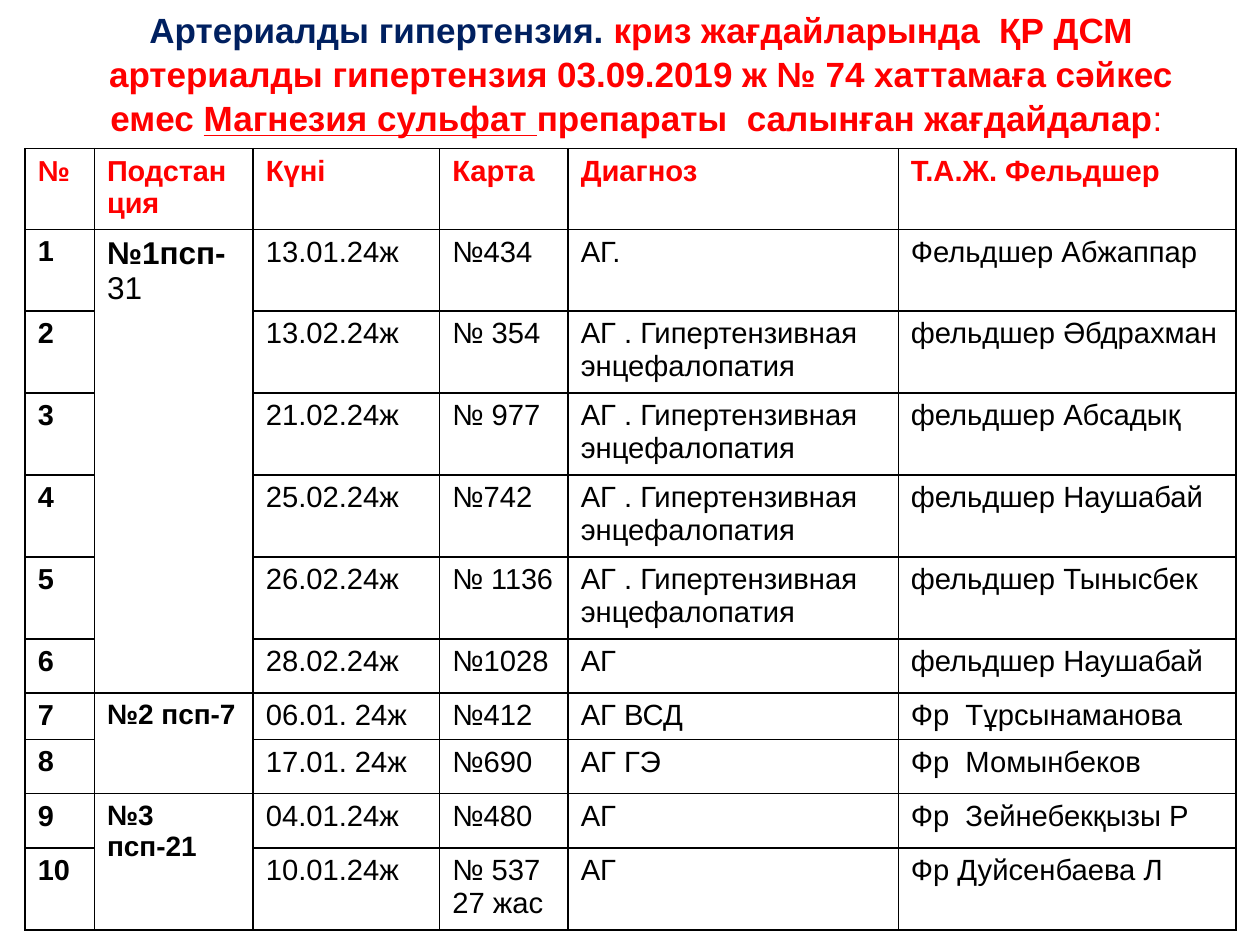
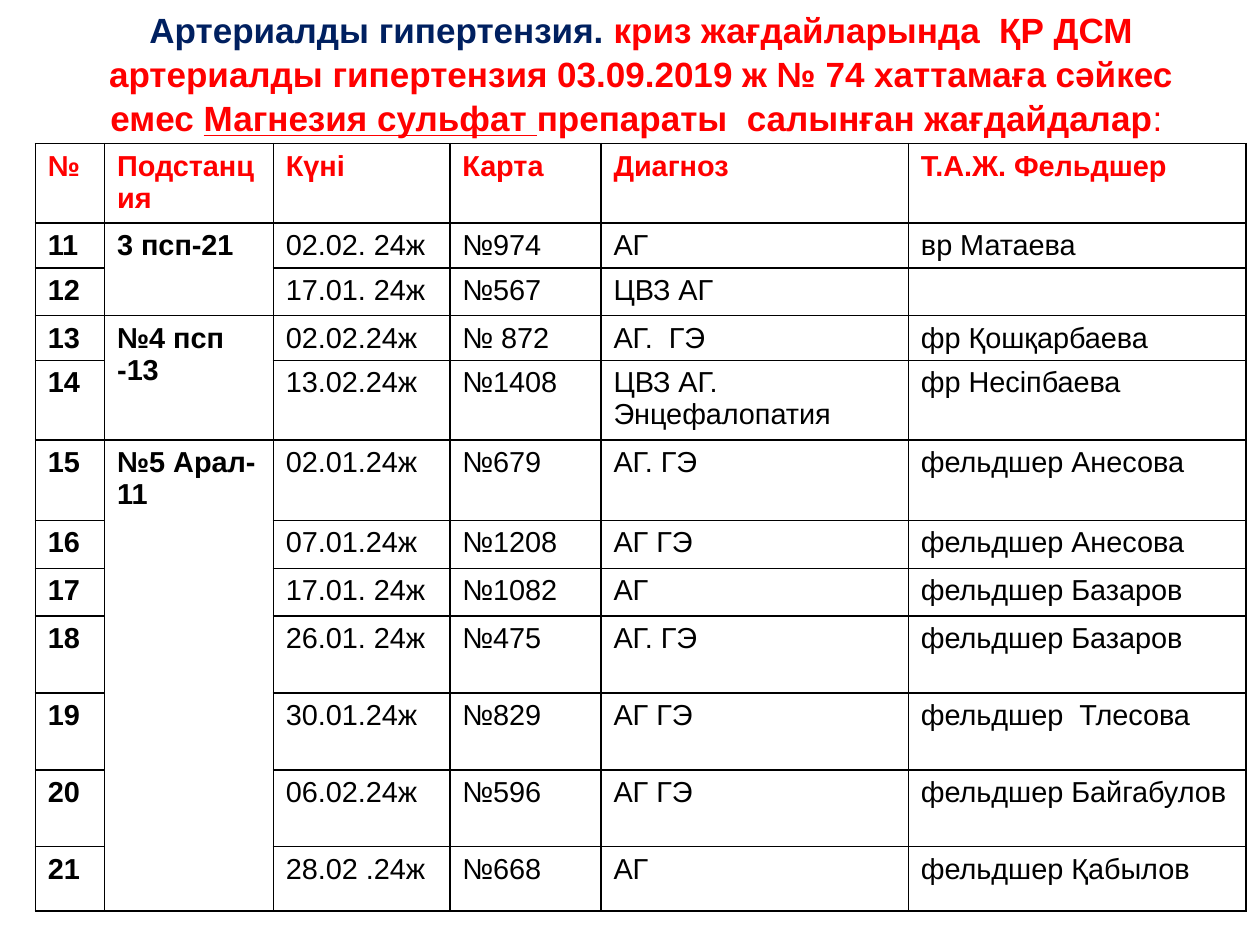
from pptx import Presentation
from pptx.util import Inches, Pt
from pptx.dml.color import RGBColor
from pptx.enum.text import PP_ALIGN, MSO_ANCHOR
from pptx.oxml.ns import qn
from lxml.etree import SubElement

FONT = "Arial"
NAVY = RGBColor(0x00, 0x20, 0x60)
RED = RGBColor(0xFF, 0x00, 0x00)
BLACK = RGBColor(0x00, 0x00, 0x00)

TITLE = [
    ("Артериалды гипертензия.", {"color": NAVY}),
    (" криз жағдайларында  ҚР ДСМ артериалды гипертензия 03.09.2019 ж "
     "№ 74 хаттамаға сәйкес емес ", {}),
    ("Магнезия сульфат ", {"underline": True}),
    ("препараты  салынған жағдайдалар", {}),
    (": ", {"bold": False}),
]
HEAD = ["№", "Подстанция", "Күні", "Карта", "Диагноз", "Т.А.Ж. Фельдшер"]
BRAIN = "АГ . Гипертензивная энцефалопатия"

# Station (None continues the one above), date, card, diagnosis, medic
# A bar in a station name ends its bold part
CASES_A = [
    ("№1псп-| 31", "13.01.24ж", "№434", "АГ.", "Фельдшер Абжаппар"),
    (None, "13.02.24ж", "№ 354", BRAIN, "фельдшер Әбдрахман"),
    (None, "21.02.24ж", "№ 977", BRAIN, "фельдшер Абсадық"),
    (None, "25.02.24ж", "№742", BRAIN, "фельдшер Наушабай"),
    (None, "26.02.24ж", "№ 1136", BRAIN, "фельдшер Тынысбек"),
    (None, "28.02.24ж", "№1028", "АГ", "фельдшер Наушабай"),
    ("№2 псп-7", "06.01. 24ж", "№412", "АГ ВСД", "Фр  Тұрсынаманова"),
    (None, "17.01. 24ж", "№690", "АГ ГЭ", "Фр  Момынбеков"),
    ("№3 псп-21", "04.01.24ж", "№480", "АГ", "Фр  Зейнебекқызы Р"),
    (None, "10.01.24ж", "№ 537 27 жас", "АГ", "Фр Дуйсенбаева Л"),
]
CASES_B = [
    ("3 псп-21", "02.02. 24ж", "№974", "АГ", "вр Матаева"),
    (None, "17.01. 24ж", "№567", "ЦВЗ АГ", ""),
    ("№4 псп -13", "02.02.24ж", "№ 872", "АГ.  ГЭ", "фр Қошқарбаева"),
    (None, "13.02.24ж", "№1408", "ЦВЗ АГ. Энцефалопатия", "фр Несіпбаева"),
    ("№5 Арал- 11", "02.01.24ж", "№679", "АГ. ГЭ", "фельдшер Анесова"),
    (None, "07.01.24ж", "№1208", "АГ ГЭ", "фельдшер Анесова"),
    (None, "17.01. 24ж", "№1082", "АГ", "фельдшер Базаров"),
    (None, "26.01. 24ж", "№475", "АГ. ГЭ", "фельдшер Базаров"),
    (None, "30.01.24ж", "№829", "АГ ГЭ", "фельдшер  Тлесова"),
    (None, "06.02.24ж", "№596", "АГ ГЭ", "фельдшер Байгабулов"),
    (None, "28.02 .24ж", "№668", "АГ", "фельдшер Қабылов"),
]

# Sizes: number, station, other columns
PAGES = [
    {"box": (0.2, 1.18, 9.61, 6.25), "first": 1, "cases": CASES_A,
     "cols": [0.55, 1.26, 1.48, 1.02, 2.62, 2.68],
     "rows": [0.64] + [0.65] * 5 + [0.43, 0.37, 0.43, 0.43, 0.65],
     "sizes": [16.5, 16] + [16.7] * 4,
     "special": {"№1псп-| 31": 18, "№ 1136": 16.5, "Подстанция": 16.5}},
    {"box": (0.28, 1.14, 9.61, 6.3), "first": 11, "cases": CASES_B,
     "cols": [0.55, 1.34, 1.4, 1.2, 2.44, 2.68],
     "rows": [0.61, 0.35, 0.38, 0.35, 0.6, 0.64, 0.38, 0.38]
             + [0.61] * 3 + [0.51],
     "sizes": [16.5] * 6, "special": {}},
]


def add_run(par, text, color, **form):
    run = par.add_run()
    run.text = text
    run.font.color.rgb = color
    for key, val in {"name": FONT, **form}.items():
        setattr(run.font, key, val)


def add_title(slide, box):
    frame = slide.shapes.add_textbox(*map(Inches, box)).text_frame
    frame.word_wrap = True
    frame.vertical_anchor = MSO_ANCHOR.MIDDLE
    par = frame.paragraphs[0]
    par.alignment = PP_ALIGN.CENTER
    par.line_spacing = 1.05
    for text, form in TITLE:
        add_run(par, text, **{"color": RED, "size": Pt(20), "bold": True, **form})


def add_edges(cell):
    props = cell._tc.get_or_add_tcPr()
    for i, side in enumerate(("lnL", "lnR", "lnT", "lnB")):
        line = props.makeelement(qn("a:" + side), {"w": str(Pt(1))})
        fill = SubElement(line, qn("a:solidFill"))
        SubElement(fill, qn("a:srgbClr"), val=str(BLACK))
        props.insert(i, line)


def fill_cell(cell, text, size, color, bold):
    form = {"margin_left": 0.1, "margin_right": 0.1,
            "margin_top": 0.05, "margin_bottom": 0.03}
    for key, val in form.items():
        setattr(cell, key, Inches(val))
    cell.fill.background()
    add_edges(cell)
    par = cell.text_frame.paragraphs[0]
    for i, part in enumerate(text.split("|") if text else []):
        add_run(par, part, color, size=Pt(size), bold=bold and i == 0)


def add_cases(slide, page):
    cases = page["cases"]
    rows = [HEAD] + [(str(n), *case) for n, case in enumerate(cases, page["first"])]
    table = slide.shapes.add_table(
        len(rows), len(HEAD), *map(Inches, page["box"])).table
    table.first_row = table.horz_banding = False
    for col, width in zip(table.columns, page["cols"]):
        col.width = Inches(width)
    for row, height in zip(table.rows, page["rows"]):
        row.height = Inches(height)

    # Header in red, numbers and stations in bold
    for r, row in enumerate(rows):
        for c, text in enumerate(row):
            size = page["special"].get(text, page["sizes"][c])
            color = BLACK if r else RED
            fill_cell(table.cell(r, c), text, size, color, r == 0 or c < 2)

    # Each station spans its cases
    tops = [r for r, row in enumerate(rows) if r and row[1]] + [len(rows)]
    for top, end in zip(tops, tops[1:]):
        table.cell(top, 1).merge(table.cell(end - 1, 1))


def main():
    deck = Presentation()
    deck.slide_width, deck.slide_height = Inches(10), Inches(7.5)
    for page in PAGES:
        slide = deck.slides.add_slide(deck.slide_layouts[6])
        add_title(slide, (0.59, 0, 9, 1.15))
        add_cases(slide, page)
    deck.save("out.pptx")


if __name__ == "__main__":
    main()
